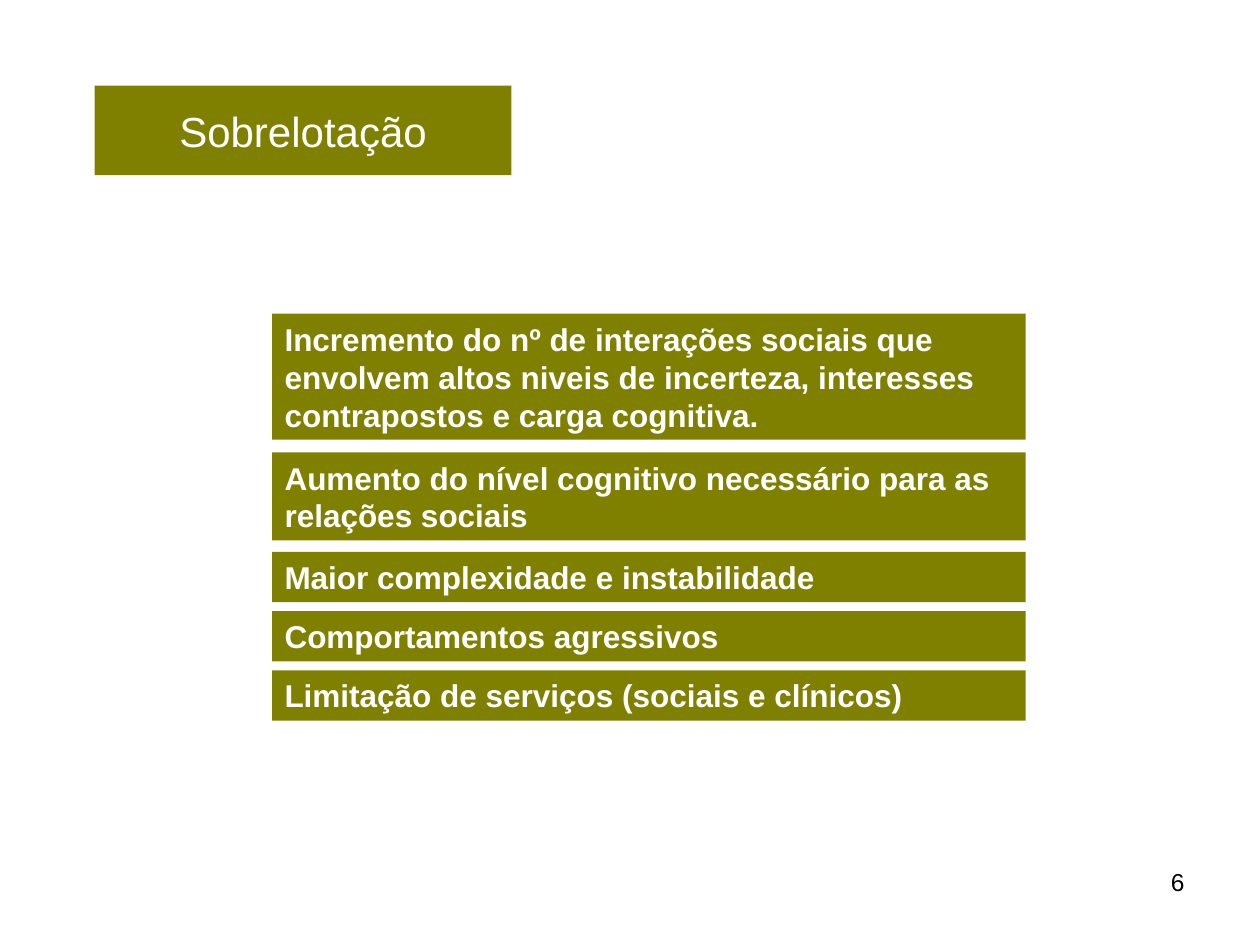
from dataclasses import dataclass
from pptx import Presentation
from pptx.dml.color import RGBColor
from pptx.enum.shapes import MSO_SHAPE
from pptx.enum.text import MSO_ANCHOR, MSO_AUTO_SIZE, PP_ALIGN
from pptx.util import Inches, Pt


@dataclass(frozen=True)
class Theme:
    font: str = "Arial"
    olive: RGBColor = RGBColor(0x80, 0x80, 0x00)
    white: RGBColor = RGBColor(0xFF, 0xFF, 0xFF)
    black: RGBColor = RGBColor(0x00, 0x00, 0x00)
    title: int = 24
    body: int = 18
    number: int = 14


theme = Theme()


def set_text(sp, text, size, color, align, anchor, bold=False):
    tf = sp.text_frame
    tf.text = text
    tf.word_wrap = True
    tf.auto_size = MSO_AUTO_SIZE.NONE
    tf.vertical_anchor = anchor
    p = tf.paragraphs[0]
    p.alignment = align
    font = p.runs[0].font
    font.name = theme.font
    font.size = Pt(size)
    font.bold = bold
    font.color.rgb = color


prs = Presentation()
prs.slide_width, prs.slide_height = Inches(10), Inches(7.5)
s = prs.slides.add_slide(prs.slide_layouts[5])

title = s.shapes.title
title.left, title.top = Inches(0.75), Inches(0.68)
title.width, title.height = Inches(3.31), Inches(0.71)
title.fill.solid()
title.fill.fore_color.rgb = theme.olive
set_text(title, "Sobrelotação", theme.title, theme.white,
         PP_ALIGN.CENTER, MSO_ANCHOR.MIDDLE)
title.text_frame.word_wrap = False

effects = [
    (2.49, 1.0, "Incremento do nº de interações sociais que envolvem altos "
                "niveis de incerteza, interesses contrapostos e carga cognitiva."),
    (3.59, 0.7, "Aumento do nível cognitivo necessário para as relações sociais"),
    (4.38, 0.4, "Maior complexidade e instabilidade"),
    (4.85, 0.4, "Comportamentos agressivos"),
    (5.32, 0.4, "Limitação de serviços (sociais e clínicos)"),
]
for top, height, text in effects:
    sp = s.shapes.add_shape(MSO_SHAPE.RECTANGLE, Inches(2.16), Inches(top),
                            Inches(5.98), Inches(height))
    sp.shadow.inherit = False
    sp.fill.solid()
    sp.fill.fore_color.rgb = theme.olive
    sp.line.fill.background()
    set_text(sp, text, theme.body, theme.white,
             PP_ALIGN.LEFT, MSO_ANCHOR.TOP, bold=True)
    sp.text_frame.auto_size = MSO_AUTO_SIZE.SHAPE_TO_FIT_TEXT

number = s.shapes.add_textbox(Inches(7.17), Inches(6.83), Inches(2.33), Inches(0.52))
set_text(number, "6", theme.number, theme.black, PP_ALIGN.RIGHT, MSO_ANCHOR.TOP)

prs.save("out.pptx")
